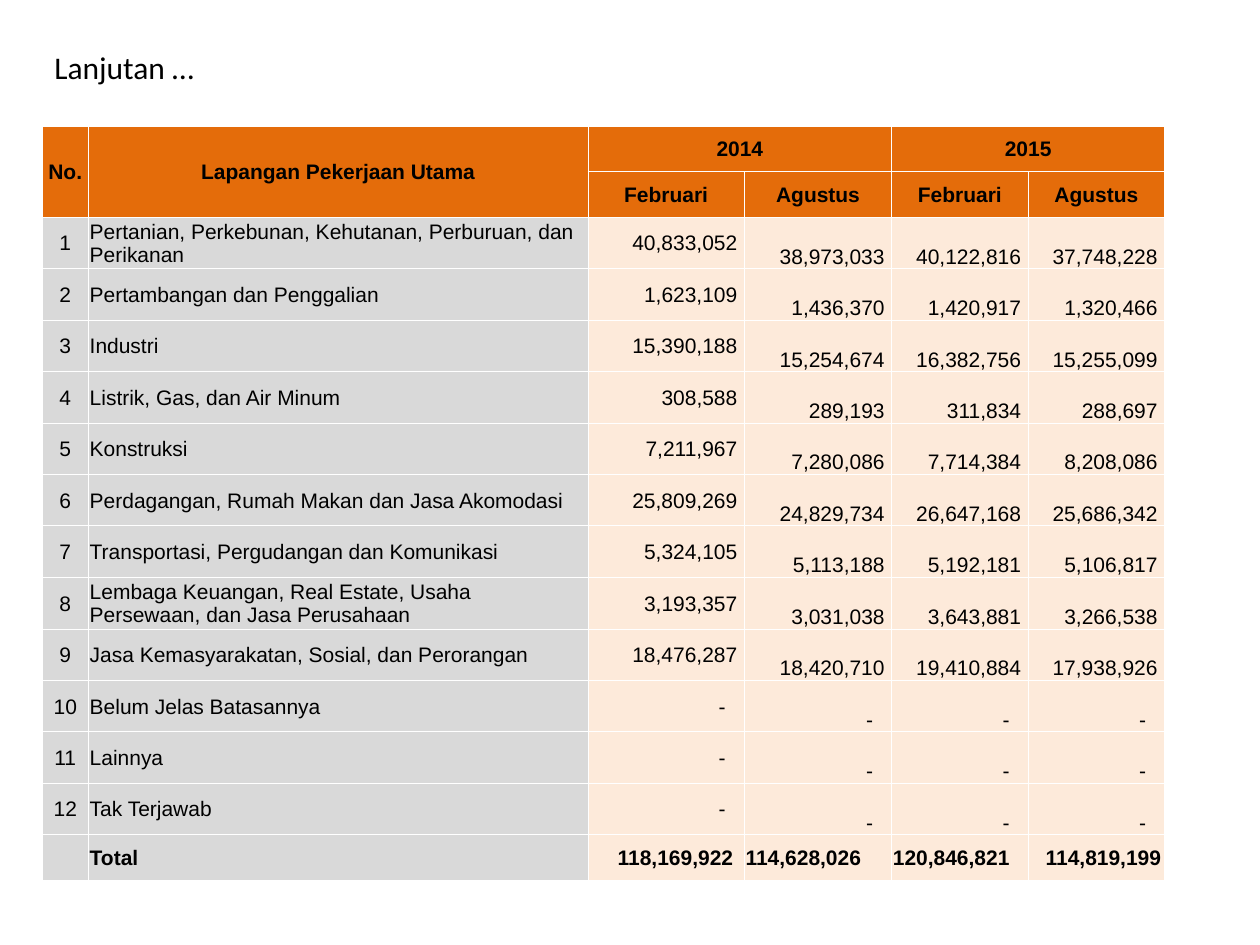
"""Build a slide with a table of employment by main industry, 2014 to 2015."""
from lxml import etree
from pptx import Presentation
from pptx.dml.color import RGBColor
from pptx.enum.text import MSO_ANCHOR, MSO_AUTO_SIZE, PP_ALIGN
from pptx.oxml.ns import qn
from pptx.util import Pt

LEFT, CENTER, RIGHT = PP_ALIGN.LEFT, PP_ALIGN.CENTER, PP_ALIGN.RIGHT
MIDDLE, BOTTOM = MSO_ANCHOR.MIDDLE, MSO_ANCHOR.BOTTOM
FIT_SHAPE = MSO_AUTO_SIZE.SHAPE_TO_FIT_TEXT

BLACK = RGBColor(0x00, 0x00, 0x00)
WHITE = RGBColor(0xFF, 0xFF, 0xFF)
ORANGE = RGBColor(0xE4, 0x6C, 0x0A)
GRAY = RGBColor(0xD9, 0xD9, 0xD9)
PEACH = RGBColor(0xFD, 0xEA, 0xDA)

COLUMN_WIDTHS = (26.6, 285.4, 89.4, 84.2, 78, 78)
HEADER_HEIGHT, BODY_HEIGHT = 26, 29.4
INSET, NUMBER_INSET, DASH_INSET = 0.7, 4, 10.7

HEADERS = [
    ("No.", "Lapangan Pekerjaan Utama", "2014", "", "2015", ""),
    ("", "", "Februari", "Agustus", "Februari", "Agustus"),
]
MERGES = [(0, 0, 1, 0), (0, 1, 1, 1), (0, 2, 0, 3), (0, 4, 0, 5)]
INDUSTRIES = [
    ("Pertanian, Perkebunan, Kehutanan, Perburuan, dan Perikanan",
     "40,833,052", "38,973,033", "40,122,816", "37,748,228"),
    ("Pertambangan dan Penggalian", "1,623,109", "1,436,370", "1,420,917", "1,320,466"),
    ("Industri", "15,390,188", "15,254,674", "16,382,756", "15,255,099"),
    ("Listrik, Gas, dan Air Minum", "308,588", "289,193", "311,834", "288,697"),
    ("Konstruksi", "7,211,967", "7,280,086", "7,714,384", "8,208,086"),
    ("Perdagangan, Rumah Makan dan Jasa Akomodasi",
     "25,809,269", "24,829,734", "26,647,168", "25,686,342"),
    ("Transportasi, Pergudangan dan Komunikasi",
     "5,324,105", "5,113,188", "5,192,181", "5,106,817"),
    ("Lembaga Keuangan, Real Estate, Usaha Persewaan, dan Jasa Perusahaan",
     "3,193,357", "3,031,038", "3,643,881", "3,266,538"),
    ("Jasa Kemasyarakatan, Sosial, dan Perorangan",
     "18,476,287", "18,420,710", "19,410,884", "17,938,926"),
    ("Belum Jelas Batasannya", "-", "-", "-", "-"),
    ("Lainnya", "-", "-", "-", "-"),
    ("Tak Terjawab", "-", "-", "-", "-"),
]
TOTALS = ("", "Total", "118,169,922", "114,628,026", "120,846,821", "114,819,199")
TOTAL_INSETS = (INSET, INSET, 17, INSET, INSET, 10)


def apply(target, values):
    """Set each named attribute of the target."""
    for name, value in values.items():
        setattr(target, name, value)


class SlideBuilder:
    """Hold the style and the current slide."""

    def __init__(self, slide):
        self.slide = slide
        self.title_font = {"name": "Calibri", "size": Pt(18)}
        self.table_font = {"name": "Arial", "size": Pt(12)}

    def add_text(self, paragraph, text, font, bold=False):
        """Add one black run to the paragraph."""
        run = paragraph.add_run()
        run.text = text
        apply(run.font, {**font, "bold": bold})
        run.font.color.rgb = BLACK

    def title(self, text, left, top, width, height):
        """Add a text box that fits its single line."""
        box = self.slide.shapes.add_textbox(Pt(left), Pt(top), Pt(width), Pt(height))
        apply(box.text_frame, {"word_wrap": False, "auto_size": FIT_SHAPE})
        self.add_text(box.text_frame.paragraphs[0], text, self.title_font)

    def table(self, left, top, widths, heights):
        """Add a plain table with the given columns and rows."""
        frame = self.slide.shapes.add_table(
            len(heights), len(widths), Pt(left), Pt(top), Pt(sum(widths)), Pt(sum(heights)))
        table = frame.table
        apply(table, {"first_row": False, "horz_banding": False})
        for column, width in zip(table.columns, widths):
            column.width = Pt(width)
        for row, height in zip(table.rows, heights):
            row.height = Pt(height)
        return table

    def borders(self, cell):
        """Draw thin white lines on all sides of the cell."""
        properties = cell._tc.get_or_add_tcPr()
        for side in ("a:lnL", "a:lnR", "a:lnT", "a:lnB"):
            line = etree.SubElement(properties, qn(side), w=str(Pt(0.5)))
            fill = etree.SubElement(line, qn("a:solidFill"))
            etree.SubElement(fill, qn("a:srgbClr"), val=str(WHITE))

    def cell(self, cell, text, color, align=LEFT, anchor=MIDDLE, bold=False,
             left=INSET, right=INSET):
        """Fill, outline and label one table cell."""
        apply(cell, {"margin_left": Pt(left), "margin_right": Pt(right),
                     "margin_top": Pt(INSET), "margin_bottom": 0,
                     "vertical_anchor": anchor})
        self.borders(cell)
        cell.fill.solid()
        cell.fill.fore_color.rgb = color
        paragraph = cell.text_frame.paragraphs[0]
        paragraph.alignment = align
        if text:
            self.add_text(paragraph, text, self.table_font, bold)


def main():
    """Build and save the presentation."""
    presentation = Presentation()
    apply(presentation, {"slide_width": Pt(720), "slide_height": Pt(540)})
    builder = SlideBuilder(presentation.slides.add_slide(presentation.slide_layouts[6]))
    builder.title("Lanjutan …", 24, 24, 96.5, 29)

    heights = [HEADER_HEIGHT] * 2 + [BODY_HEIGHT] * len(INDUSTRIES) + [HEADER_HEIGHT]
    table = builder.table(24, 72, COLUMN_WIDTHS, heights)
    for top, left, bottom, right in MERGES:
        table.cell(top, left).merge(table.cell(bottom, right))

    for row, texts in enumerate(HEADERS):
        for column, text in enumerate(texts):
            builder.cell(table.cell(row, column), text, ORANGE, CENTER, bold=True)

    for number, (industry, *values) in enumerate(INDUSTRIES, start=1):
        row = number + 1
        builder.cell(table.cell(row, 0), str(number), GRAY, CENTER)
        builder.cell(table.cell(row, 1), industry, GRAY)
        for column, value in enumerate(values, start=2):
            builder.cell(table.cell(row, column), value, PEACH, RIGHT,
                         MIDDLE if column == 2 else BOTTOM,
                         right=DASH_INSET if value == "-" else NUMBER_INSET)

    for column, (text, inset) in enumerate(zip(TOTALS, TOTAL_INSETS)):
        builder.cell(table.cell(len(heights) - 1, column), text,
                     GRAY if column < 2 else PEACH, bold=True, left=inset)

    presentation.save("out.pptx")


if __name__ == "__main__":
    main()
